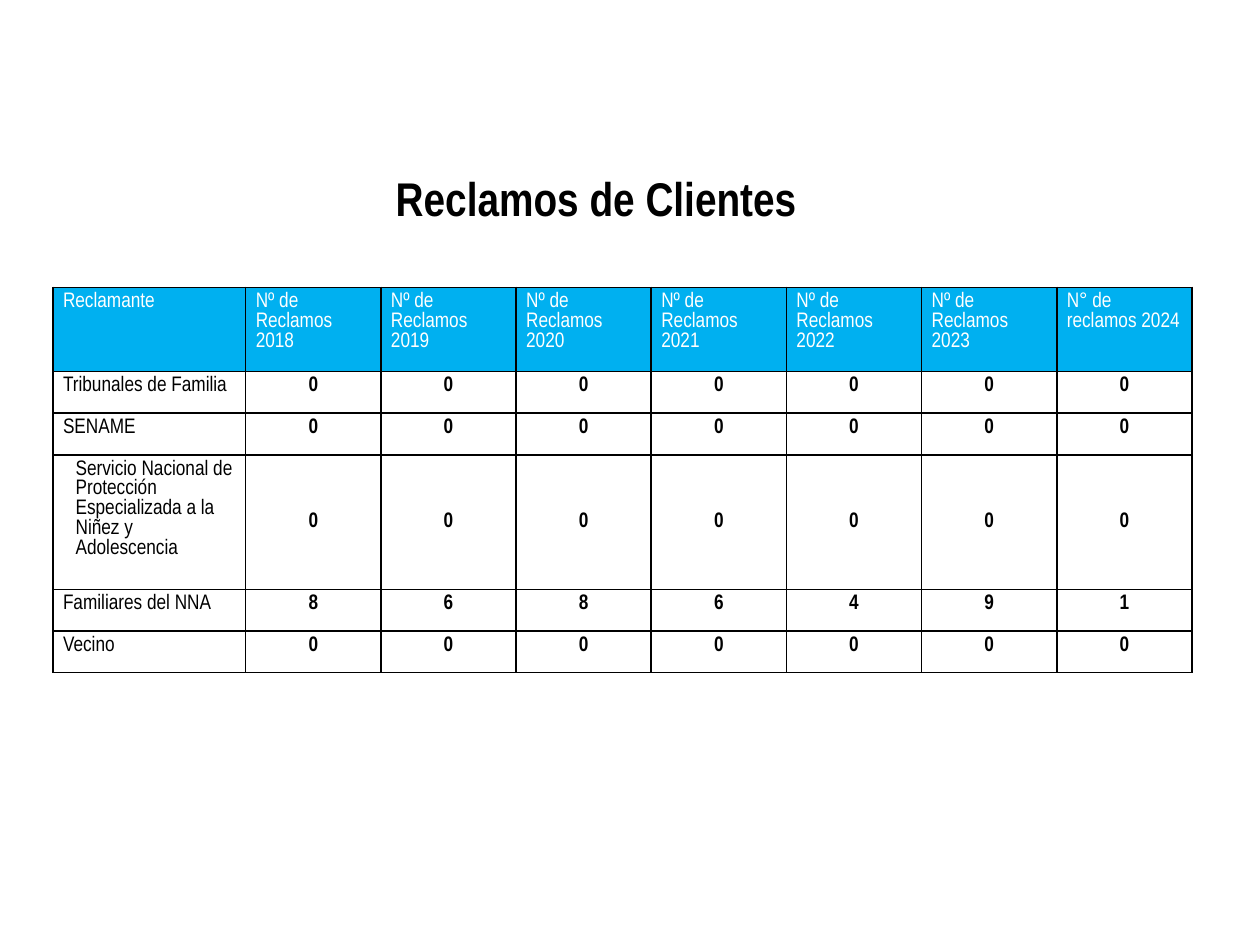
from dataclasses import dataclass

import pptx
import pptx.dml.color
import pptx.enum.text
import pptx.oxml
import pptx.oxml.ns
import pptx.util

Inches = pptx.util.Inches
Pt = pptx.util.Pt
RGBColor = pptx.dml.color.RGBColor
Align = pptx.enum.text.PP_ALIGN
Anchor = pptx.enum.text.MSO_ANCHOR

BLACK = RGBColor(0x00, 0x00, 0x00)
WHITE = RGBColor(0xFF, 0xFF, 0xFF)
BLUE = RGBColor(0x00, 0xB0, 0xF0)
FONT = "Arial Narrow"


@dataclass
class Row:
    label: str
    counts: list[int]
    height: float = 0.33
    indent: float = 0
    anchor: Anchor = Anchor.TOP


@dataclass
class Style:
    fill: RGBColor = WHITE
    color: RGBColor = BLACK
    bold: bool = False
    align: Align = Align.LEFT
    anchor: Anchor = Anchor.TOP
    indent: float = 0


HEADS = ["Reclamante"]
HEADS += [f"Nº de Reclamos {year}" for year in range(2018, 2024)]
HEADS += ["N° de reclamos 2024"]
ROWS = [
    Row("Tribunales de Familia", [0] * 7),
    Row("SENAME", [0] * 7),
    Row(
        "Servicio Nacional de Protección Especializada a la Niñez y Adolescencia",
        [0] * 7, 1.07, 0.1, Anchor.MIDDLE,
    ),
    Row("Familiares del NNA", [8, 6, 8, 6, 4, 9, 1]),
    Row("Vecino", [0] * 7),
]


def set_font(font: pptx.text.text.Font, size: float, color: RGBColor, bold: bool) -> None:
    font.name = FONT
    font.size = Pt(size)
    font.color.rgb = color
    font.bold = bold


def add_edges(cell: pptx.table._Cell) -> None:
    props = cell._tc.get_or_add_tcPr()
    space = pptx.oxml.ns.nsdecls("a")
    for spot, side in enumerate("LRTB"):
        edge = pptx.oxml.parse_xml(
            f'<a:ln{side} {space} w="{Pt(1)}"><a:solidFill>'
            f'<a:srgbClr val="{BLACK}"/></a:solidFill></a:ln{side}>'
        )
        props.insert(spot, edge)


def fill_cell(cell: pptx.table._Cell, text: str, style: Style) -> None:
    cell.text = text
    cell.margin_left = cell.margin_right = Inches(0.08)
    cell.margin_top = cell.margin_bottom = Inches(0.04)
    cell.vertical_anchor = style.anchor
    cell.fill.solid()
    cell.fill.fore_color.rgb = style.fill
    add_edges(cell)
    para = cell.text_frame.paragraphs[0]
    para.alignment = style.align
    if style.indent:
        props = para._p.get_or_add_pPr()
        props.set("marL", str(Inches(style.indent)))
        props.set("indent", "0")
    set_font(para.font, 12, style.color, style.bold)


def add_title(slide: pptx.slide.Slide, text: str) -> None:
    title = slide.shapes.title
    title.left, title.top = Inches(1.5), Inches(1.29)
    title.width, title.height = Inches(6.46), Inches(0.61)
    frame = title.text_frame
    frame.text = text
    frame.word_wrap = True
    frame.auto_size = pptx.enum.text.MSO_AUTO_SIZE.NONE
    frame.vertical_anchor = Anchor.MIDDLE
    para = frame.paragraphs[0]
    para.alignment = Align.CENTER
    para.line_spacing = 0.9
    set_font(para.font, 27, BLACK, True)


def add_claims(slide: pptx.slide.Slide) -> None:
    widths = [1.53] + [1.073] * 7
    heights = [0.67] + [row.height for row in ROWS]
    frame = slide.shapes.add_table(
        len(heights), len(widths), Inches(0.42), Inches(2.28),
        Inches(sum(widths)), Inches(sum(heights)),
    )
    table = frame.table
    for column, width in zip(table.columns, widths):
        column.width = Inches(width)
    for line, height in zip(table.rows, heights):
        line.height = Inches(height)
    for col, head in enumerate(HEADS):
        fill_cell(table.cell(0, col), head, Style(fill=BLUE, color=WHITE))
    for num, row in enumerate(ROWS, 1):
        fill_cell(table.cell(num, 0), row.label, Style(indent=row.indent))
        style = Style(bold=True, align=Align.CENTER, anchor=row.anchor)
        for col, count in enumerate(row.counts, 1):
            fill_cell(table.cell(num, col), str(count), style)


def main() -> None:
    deck = pptx.Presentation()
    deck.slide_width, deck.slide_height = Inches(10), Inches(7.5)
    slide = deck.slides.add_slide(deck.slide_layouts[5])
    add_claims(slide)
    add_title(slide, "Reclamos de Clientes")
    deck.save("out.pptx")


if __name__ == "__main__":
    main()
